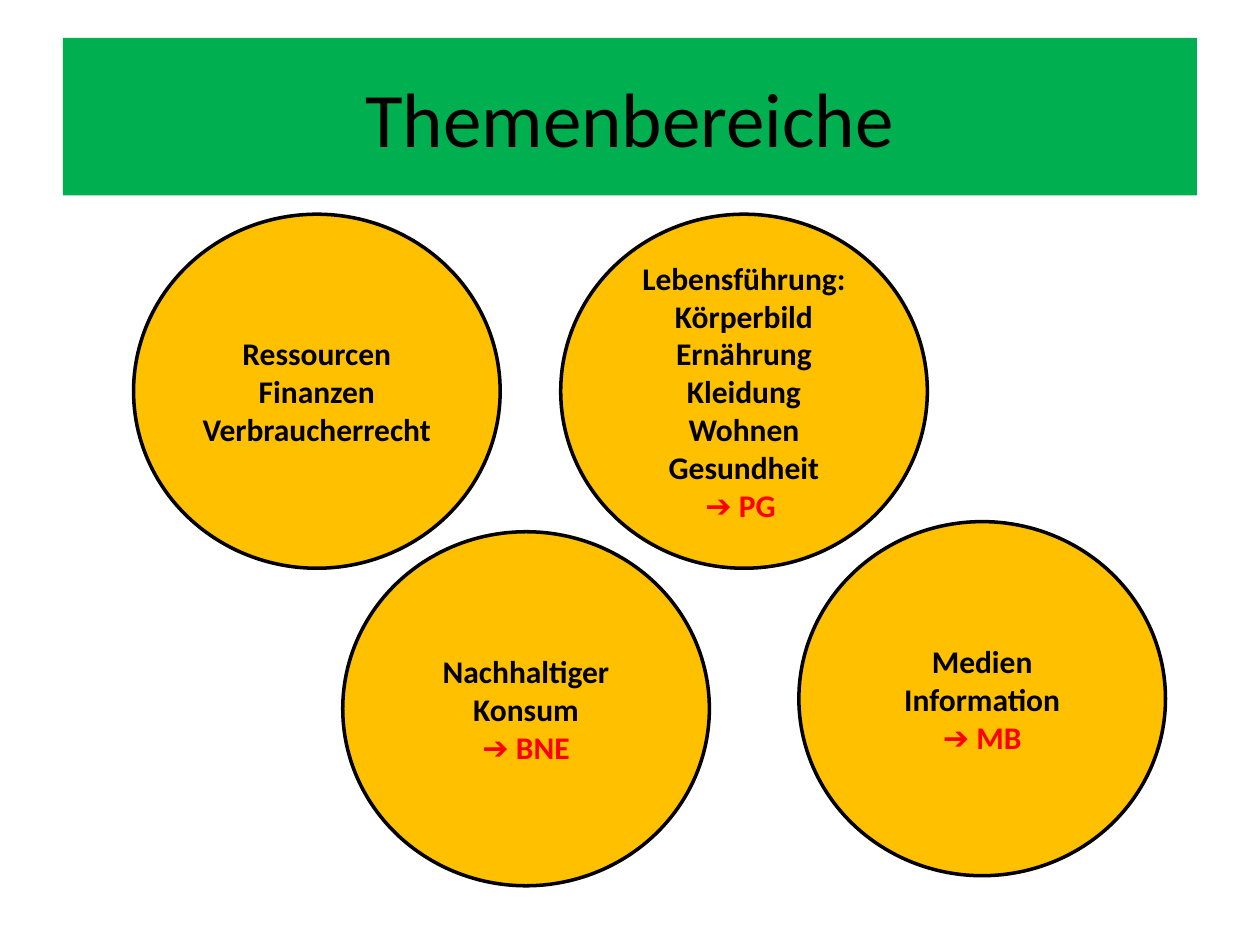
import pptx
import pptx.util
import pptx.dml.color
import pptx.enum.shapes
import pptx.enum.text

Inches = pptx.util.Inches
Pt = pptx.util.Pt
RGB = pptx.dml.color.RGBColor.from_string
SHAPE = pptx.enum.shapes.MSO_SHAPE

COLORS = {"banner": "00B050", "circle": "FFC000", "text": "000000", "link": "FF0000"}

deck = pptx.Presentation()
deck.slide_width = Inches(10)
deck.slide_height = Inches(7.5)
slide = deck.slides.add_slide(deck.slide_layouts[6])


def add_box(kind, box, fill, lines, size, bold):
    """Add a filled shape with centred lines; lines with an arrow are red."""
    shape = slide.shapes.add_shape(kind, *[Inches(n) for n in box])
    shape.shadow.inherit = False
    shape.fill.solid()
    shape.fill.fore_color.rgb = RGB(COLORS[fill])
    frame = shape.text_frame
    frame.word_wrap = True
    frame.vertical_anchor = pptx.enum.text.MSO_ANCHOR.MIDDLE
    frame.text = "\n".join(lines)
    for para in frame.paragraphs:
        para.alignment = pptx.enum.text.PP_ALIGN.CENTER
        for run in para.runs:
            run.font.name = "Calibri"
            run.font.size = Pt(size)
            run.font.bold = bold
            tint = "link" if "➔" in run.text else "text"
            run.font.color.rgb = RGB(COLORS[tint])
    return shape


title = add_box(SHAPE.RECTANGLE, (0.5, 0.3, 9, 1.25), "banner",
                ["Themenbereiche"], 44, False)
title.line.fill.background()

topics = [
    (1.06, 1.7, ["Ressourcen", "Finanzen", "Verbraucherrecht"]),
    (6.34, 4.14, ["Medien", "Information", "➔ MB"]),
    (4.45, 1.7, ["Lebensführung:", "Körperbild", "Ernährung Kleidung",
                 "Wohnen", "Gesundheit", "➔ PG "]),
    (2.72, 4.22, ["Nachhaltiger Konsum", "➔ BNE"]),
]
for left, top, lines in topics:
    circle = add_box(SHAPE.OVAL, (left, top, 2.91, 2.81), "circle", lines, 18, True)
    circle.line.color.rgb = RGB(COLORS["text"])
    circle.line.width = Pt(2)

deck.save("out.pptx")
